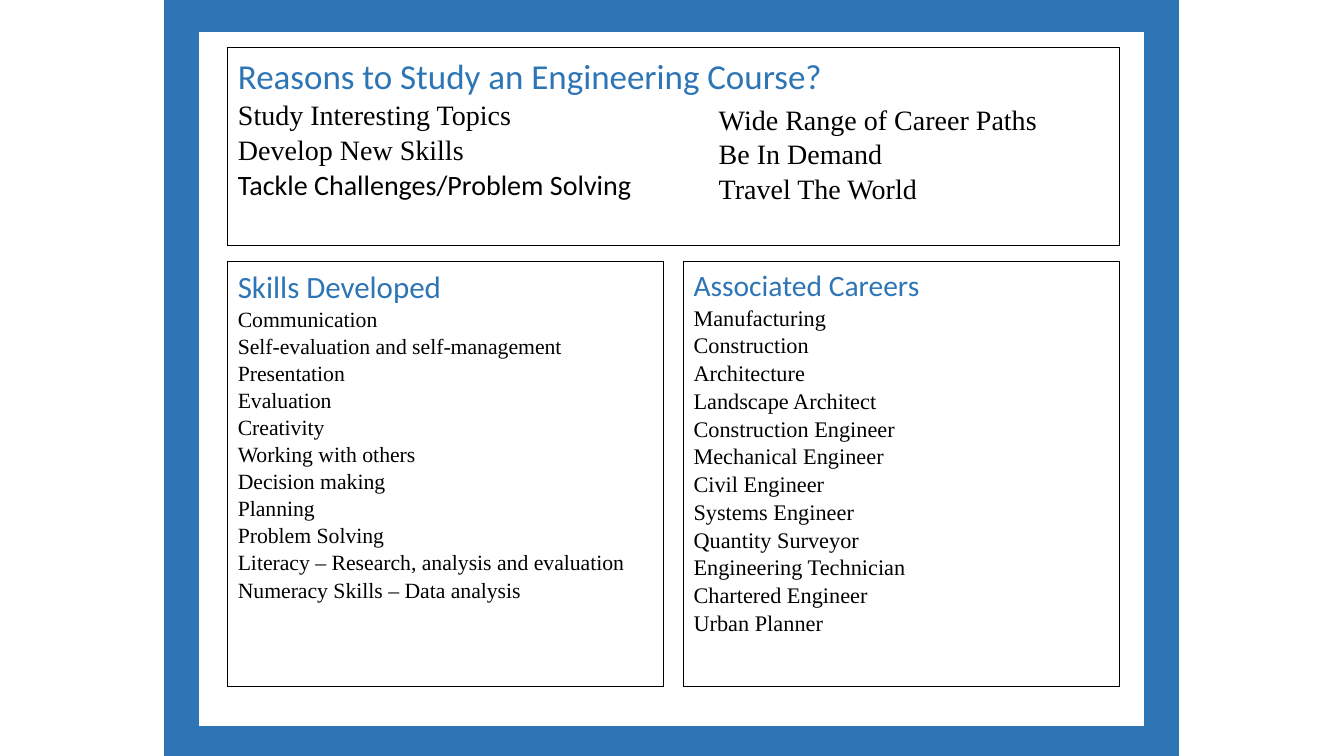
"""Build a slide on the reasons to study an engineering course."""
from lxml import etree
from pptx import Presentation
from pptx.dml.color import RGBColor
from pptx.enum.shapes import MSO_SHAPE
from pptx.enum.text import MSO_ANCHOR, MSO_AUTO_SIZE, PP_ALIGN
from pptx.oxml.ns import qn
from pptx.util import Inches, Pt

RECTANGLE = MSO_SHAPE.RECTANGLE
TOP = MSO_ANCHOR.TOP
NO_FIT = MSO_AUTO_SIZE.NONE
LEFT = PP_ALIGN.LEFT

COLORS = {"blue": "2E75B6", "black": "000000"}
SANS, SERIF = "Calibri", "Times New Roman"

TITLE = "Reasons to Study an Engineering Course?"
REASONS = ["Study Interesting Topics", "Develop New Skills"]
CHALLENGES = "Tackle Challenges/Problem Solving"
MORE_REASONS = ["Wide Range of Career Paths", "Be In Demand", "Travel The World"]
PANELS = [
    ("Skills Developed", 22.1, 15.5, [
        "Communication", "Self-evaluation and self-management", "Presentation",
        "Evaluation", "Creativity", "Working with others", "Decision making",
        "Planning", "Problem Solving",
        "Literacy – Research, analysis and evaluation",
        "Numeracy Skills – Data analysis"]),
    ("Associated Careers", 21.1, 15.9, [
        "Manufacturing", "Construction", "Architecture", "Landscape Architect",
        "Construction Engineer", "Mechanical Engineer", "Civil Engineer",
        "Systems Engineer", "Quantity Surveyor", "Engineering Technician",
        "Chartered Engineer", "Urban Planner"]),
]

MARGIN_LEFT, TITLE_TOP, TITLE_WIDTH, TITLE_HEIGHT = 2.26, 0.47, 8.84, 1.97
PANEL_TOP, PANEL_HEIGHT, PANEL_GAP = 2.59, 4.22, 0.2
PANEL_WIDTH = (TITLE_WIDTH - PANEL_GAP) / 2


def place(box, left, top, width, height):
    """Move and size a box, in inches."""
    box.left, box.top = Inches(left), Inches(top)
    box.width, box.height = Inches(width), Inches(height)


def outline(box, color, weight):
    """Give a box a square-cornered outline and no fill."""
    box.fill.background()
    box.line.color.rgb = RGBColor.from_string(COLORS[color])
    box.line.width = Pt(weight)
    etree.SubElement(box.line._get_or_add_ln(), qn("a:miter"), lim="800000")


def add_rectangle(page, left, top, width, height, color="black", weight=0.75):
    """Add an outlined rectangle."""
    box = page.shapes.add_shape(RECTANGLE, Inches(left), Inches(top),
                                Inches(width), Inches(height))
    box.shadow.inherit = False
    outline(box, color, weight)
    return box


def add_line(box, text, size, font=SERIF, color="black"):
    """Add one paragraph of text to a box."""
    frame = box.text_frame
    para = frame.add_paragraph() if frame.text else frame.paragraphs[0]
    para.alignment = LEFT
    para.line_spacing = 1.04
    para.space_before = para.space_after = Pt(0)
    span = para.add_run()
    span.text = text
    span.font.size = Pt(size)
    span.font.name = font
    span.font.color.rgb = RGBColor.from_string(COLORS[color])


def settle(box):
    """Wrap the text of a box and start it at the top."""
    frame = box.text_frame
    frame.word_wrap = True
    frame.auto_size = NO_FIT
    frame.vertical_anchor = TOP


def main():
    """Build and save the deck."""
    deck = Presentation()
    deck.slide_width, deck.slide_height = Inches(13.33), Inches(7.5)
    page = deck.slides.add_slide(deck.slide_layouts[5])

    add_rectangle(page, 1.8, 0.15, 9.72, 7.22, "blue", 24.75)

    for column, (heading, heading_size, size, items) in enumerate(PANELS):
        left = MARGIN_LEFT + column * (PANEL_WIDTH + PANEL_GAP)
        panel = add_rectangle(page, left, PANEL_TOP, PANEL_WIDTH, PANEL_HEIGHT)
        settle(panel)
        add_line(panel, heading, heading_size, SANS, "blue")
        for item in items:
            add_line(panel, item, size)

    title = page.shapes.title
    place(title, MARGIN_LEFT, TITLE_TOP, TITLE_WIDTH, TITLE_HEIGHT)
    outline(title, "black", 0.75)
    settle(title)
    add_line(title, TITLE, 25, SANS, "blue")
    for reason in REASONS:
        add_line(title, reason, 20)
    add_line(title, CHALLENGES, 20, SANS)

    more = page.shapes.add_textbox(Inches(7.03), Inches(0.95),
                                   Inches(TITLE_WIDTH), Inches(TITLE_HEIGHT))
    settle(more)
    for reason in MORE_REASONS:
        add_line(more, reason, 20)

    deck.save("out.pptx")


if __name__ == "__main__":
    main()
